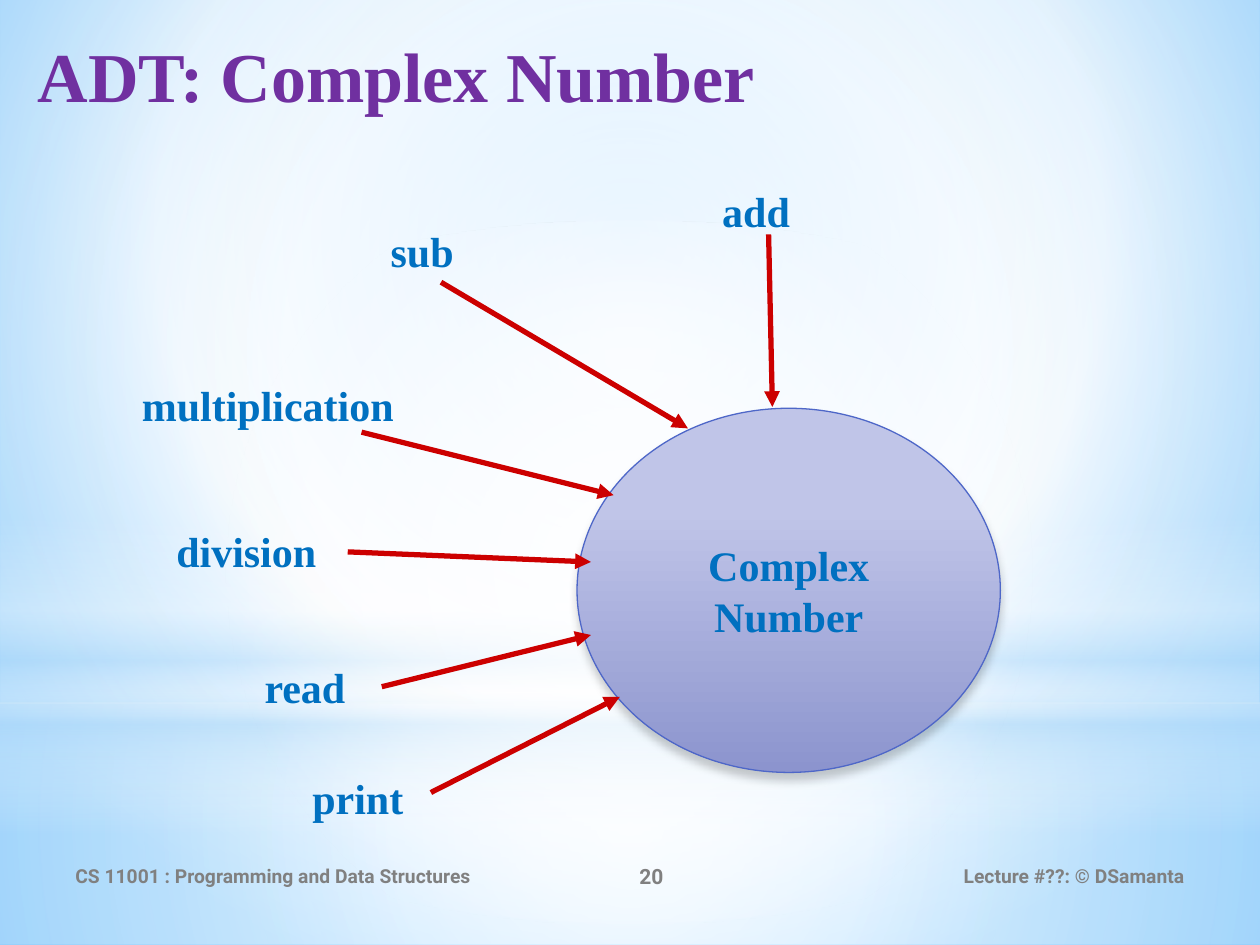
from lxml.etree import SubElement
from pptx import Presentation
from pptx.dml.color import RGBColor
from pptx.enum.shapes import MSO_CONNECTOR, MSO_SHAPE
from pptx.enum.text import MSO_ANCHOR, MSO_AUTO_SIZE, PP_ALIGN
from pptx.oxml.ns import qn
from pptx.util import Inches, Pt

PURPLE = RGBColor(0x70, 0x30, 0xA0)
BLUE = RGBColor(0x00, 0x70, 0xC0)
OUTLINE = RGBColor(0x4E, 0x67, 0xC8)
RED = RGBColor(0xCC, 0x00, 0x00)
GRAY = RGBColor(0x80, 0x80, 0x80)
BLACK = RGBColor(0, 0, 0)
WHITE = RGBColor(0xFF, 0xFF, 0xFF)
SKY = RGBColor(0xB4, 0xDC, 0xFA)
SKY_MID = RGBColor(0x9E, 0xD5, 0xFF)
SKY_DEEP = RGBColor(0x5B, 0xB9, 0xFF)
LILAC = RGBColor(0xC0, 0xC5, 0xE8)
VIOLET = RGBColor(0x8C, 0x94, 0xCE)

SERIF = "Times New Roman"
SANS = "Roboto"
CENTER = (50, 50, 50, 50)

# Operation: label left, top, width; arrow start; arrow end
OPERATIONS = {
    "add": ((5.39, 1.42, 1.22), (6.1, 1.86), (6.13, 3.23)),
    "sub": ((2.74, 1.74, 1.22), (3.5, 2.24), (5.46, 3.4)),
    "multiplication": ((0.83, 2.96, 2.59), (2.87, 3.43), (4.87, 3.93)),
    "division": ((1.22, 4.12, 1.47), (2.76, 4.38), (4.69, 4.46)),
    "read": ((1.81, 5.2, 1.22), (3.03, 5.45), (4.69, 5.04)),
    "print": ((2.23, 6.08, 1.22), (3.42, 6.29), (4.92, 5.53)),
}


def add_color(parent, color, alpha):
    clr = SubElement(parent, qn("a:srgbClr"), val=str(color))
    if alpha < 100:
        SubElement(clr, qn("a:alpha"), val=str(alpha * 1000))


def set_gradient(fill, element, stops, focus=None):
    """Stops are (position, colour, opacity); focus makes it circular."""
    fill.gradient()
    grad = next(element.iter(qn("a:gradFill")))
    for child in list(grad):
        grad.remove(child)
    stop_list = SubElement(grad, qn("a:gsLst"))
    for pos, color, alpha in stops:
        stop = SubElement(stop_list, qn("a:gs"), pos=str(pos * 1000))
        add_color(stop, color, alpha)
    if focus:
        circle = SubElement(grad, qn("a:path"), path="circle")
        sides = {side: str(v * 1000) for side, v in zip("ltrb", focus)}
        SubElement(circle, qn("a:fillToRect"), **sides)
    else:
        SubElement(grad, qn("a:lin"), ang="5400000", scaled="0")


def add_gradient_shape(slide, kind, box, stops, focus=None):
    sp = slide.shapes.add_shape(kind, *map(Inches, box))
    sp.shadow.inherit = False
    sp.line.fill.background()
    set_gradient(sp.fill, sp.element, stops, focus)
    return sp


def format_paragraph(p, size, color, font, align):
    p.alignment = align
    p.font.size = Pt(size)
    p.font.name = font
    p.font.bold = True
    p.font.color.rgb = color


def add_text(slide, text, box, size, color, font, align):
    tf = slide.shapes.add_textbox(*map(Inches, box)).text_frame
    tf.word_wrap = True
    tf.text = text
    format_paragraph(tf.paragraphs[0], size, color, font, align)
    return tf


def add_backdrop(slide):
    set_gradient(slide.background.fill, slide.element,
                 [(0, SKY_MID, 100), (60, WHITE, 100), (100, SKY_DEEP, 100)],
                 (20, 10, 20, 60))
    rect, oval = MSO_SHAPE.RECTANGLE, MSO_SHAPE.OVAL
    add_gradient_shape(slide, rect, (0, 5.58, 10, 1.92),
                       [(0, WHITE, 91), (37, WHITE, 76), (100, SKY, 79)], CENTER)
    add_gradient_shape(slide, rect, (0, 0, 10, 5.58),
                       [(0, WHITE, 89), (48, WHITE, 62), (100, SKY, 79)], CENTER)
    add_gradient_shape(slide, rect, (0, 4.12, 10, 2.5),
                       [(0, WHITE, 0), (29, WHITE, 30), (45, SKY, 40),
                        (55, WHITE, 26), (65, SKY, 60), (100, WHITE, 0)])
    add_gradient_shape(slide, oval, (0, 1.75, 10, 5.58),
                       [(0, WHITE, 100), (56, WHITE, 0)], CENTER)


def add_title(slide, text):
    title = slide.shapes.title
    title.left, title.top = Inches(0.2), Inches(0.21)
    title.width, title.height = Inches(9.53), Inches(1.25)
    tf = title.text_frame
    tf.text = text
    tf.vertical_anchor = MSO_ANCHOR.TOP
    format_paragraph(tf.paragraphs[0], 40, PURPLE, SERIF, PP_ALIGN.LEFT)
    # Bring the title in front of the backdrop
    slide.shapes.element.append(title.element)


def add_footer(slide, text, left, width, size, align):
    tf = add_text(slide, text, (left, 6.75, width, 0.4), size, GRAY, SANS, align)
    tf.vertical_anchor = MSO_ANCHOR.MIDDLE


def add_type_circle(slide):
    sp = add_gradient_shape(slide, MSO_SHAPE.OVAL, (4.58, 3.24, 3.36, 2.89),
                            [(28, LILAC, 100), (100, VIOLET, 100)])
    sp.line.color.rgb = OUTLINE
    sp.line.width = Pt(0.75)
    effects = next(sp.element.iter(qn("a:effectLst")))
    shadow = SubElement(effects, qn("a:outerShdw"), blurRad=str(Pt(5)),
                        dist=str(Pt(4)), dir="5400000", rotWithShape="0")
    add_color(shadow, BLACK, 20)
    tf = sp.text_frame
    tf.word_wrap = False
    tf.vertical_anchor = MSO_ANCHOR.MIDDLE
    tf.text = "Complex\nNumber"
    for p in tf.paragraphs:
        format_paragraph(p, 24, BLUE, SERIF, PP_ALIGN.CENTER)


def add_arrow(slide, start, end):
    line = slide.shapes.add_connector(MSO_CONNECTOR.STRAIGHT,
                                      *map(Inches, start + end))
    line.line.color.rgb = RED
    line.line.width = Pt(3)
    SubElement(line.line._get_or_add_ln(), qn("a:tailEnd"), type="triangle")
    SubElement(line.element.spPr, qn("a:effectLst"))


def add_label(slide, text, left, top, width):
    tf = add_text(slide, text, (left, top, width, 0.5), 24, BLUE, SERIF,
                  PP_ALIGN.CENTER)
    tf.auto_size = MSO_AUTO_SIZE.SHAPE_TO_FIT_TEXT


def main():
    prs = Presentation()
    prs.slide_width, prs.slide_height = Inches(10), Inches(7.5)
    slide = prs.slides.add_slide(prs.slide_layouts[5])

    add_backdrop(slide)
    add_title(slide, "ADT: Complex Number")

    # Footer
    add_footer(slide, "CS 11001 : Programming and Data Structures",
               0.5, 3.67, 11, PP_ALIGN.LEFT)
    add_footer(slide, "20", 4.17, 2, 12, PP_ALIGN.CENTER)
    add_footer(slide, "Lecture #??: © DSamanta", 6.75, 2.75, 11, PP_ALIGN.RIGHT)

    # Data type with its operations
    add_type_circle(slide)
    for name, (place, start, end) in OPERATIONS.items():
        add_arrow(slide, start, end)
        add_label(slide, name, *place)

    prs.save("out.pptx")


if __name__ == "__main__":
    main()
